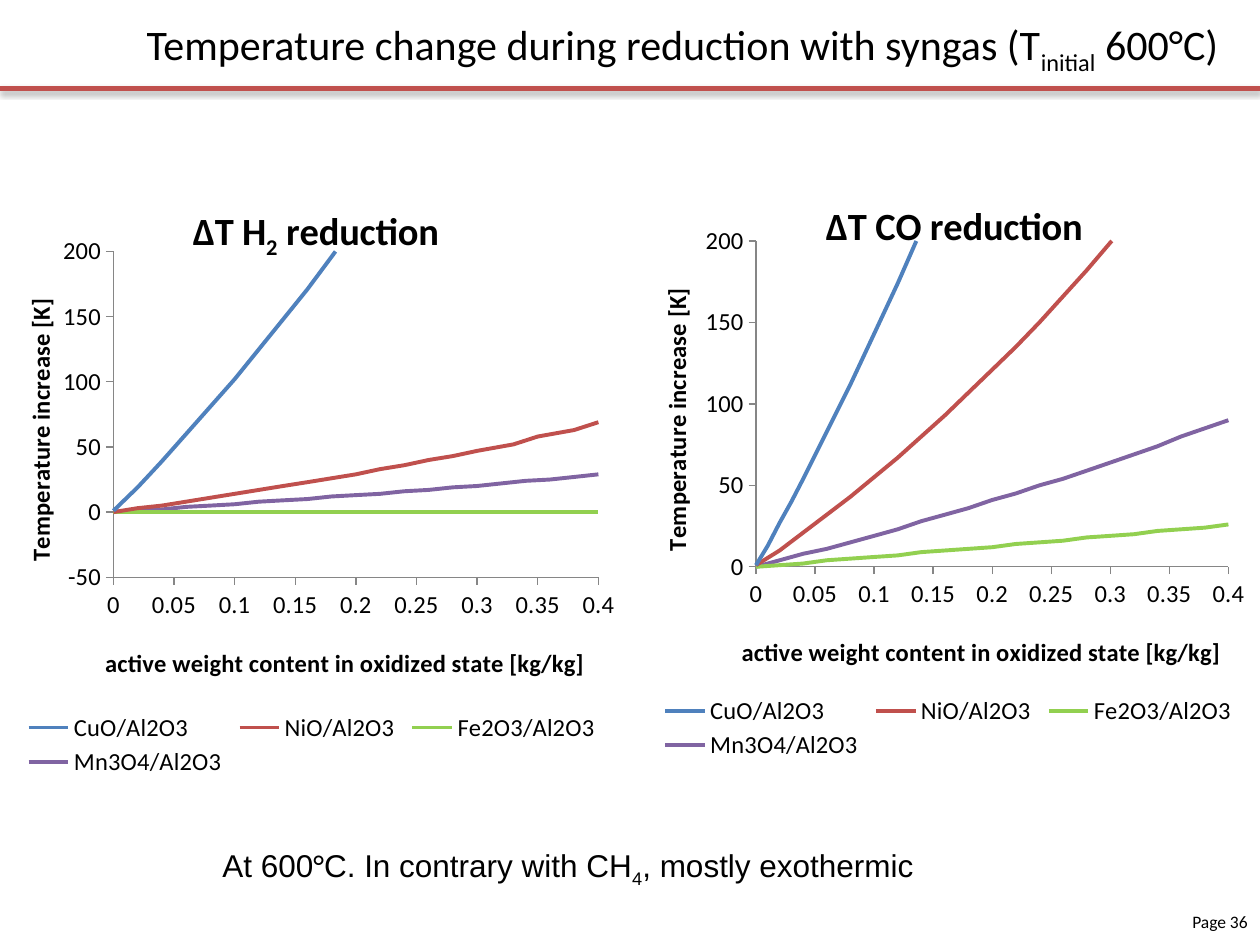
import pptx
import pptx.chart.data
import pptx.dml.color
import pptx.enum.chart
import pptx.enum.shapes
import pptx.enum.text
import pptx.oxml
import pptx.oxml.ns
import pptx.util
from dataclasses import dataclass

Pt = pptx.util.Pt
qn = pptx.oxml.ns.qn


@dataclass(frozen=True)
class Theme:
    text: str = "000000"
    rule: str = "C0504D"
    axis: str = "868686"
    series: tuple = ("4F81BD", "C0504D", "92D050", "8064A2")
    heading_font: str = "Calibri"
    body_font: str = "Arial"
    title: int = 24
    chart_title: int = 22
    note: int = 18
    chart_text: int = 14
    page: int = 10


THEME = Theme()

# Weight contents: one grid for CuO, one for NiO, one for both Fe and Mn oxides
X_CU = [0, .01, .02, .03, .04, .06, .08, .1, .12, .14, .16, .18, .2,
        .21, .22, .23, .24, .26, .28, .3]
X_NI = [i / 50 for i in range(16)] + [.33, .35, .38, .4]
X_LOW = [0] + [i / 50 for i in range(2, 21)]
OXIDES = [("CuO/Al2O3", X_CU), ("NiO/Al2O3", X_NI),
          ("Fe2O3/Al2O3", X_LOW), ("Mn3O4/Al2O3", X_LOW)]

H2_RISE = [
    [1, 10, 19, 29, 39, 60, 81, 102, 125, 148, 171, 196, 221, 234, 247, 260, 273, 301, 329, 359],
    [0, 3, 5, 8, 11, 14, 17, 20, 23, 26, 29, 33, 36, 40, 43, 47, 52, 58, 63, 69],
    [0] * 20,
    [0, 2, 4, 5, 6, 8, 9, 10, 12, 13, 14, 16, 17, 19, 20, 22, 24, 25, 27, 29],
]
CO_RISE = [
    [1, 13, 27, 40, 54, 83, 112, 143, 174, 207, 241, 276, 312, 331, 350, 369, 389, 430, 472, 516],
    [1, 10, 21, 32, 43, 55, 67, 80, 93, 107, 121, 135, 150, 166, 182, 199, 222, 245, 270, 296],
    [0, 2, 4, 5, 6, 7, 9, 10, 11, 12, 14, 15, 16, 18, 19, 20, 22, 23, 24, 26],
    [0, 8, 11, 15, 19, 23, 28, 32, 36, 41, 45, 50, 54, 59, 64, 69, 74, 80, 85, 90],
]

# Places of chart parts, as fractions of the chart: x, y and perhaps w, h
H2_PLACES = {"title": (.3, .04), "plot": (.18, .12, .77, .535), "x": (.16, .76),
             "y": (.03, .19), "legend": (.03, .87, .93, .12)}
CO_PLACES = {"title": (.3, .04), "plot": (.2, .12, .75, .535), "x": (.17, .76),
             "y": (.04, .19), "legend": (.04, .86, .93, .12)}


def rgb(value):
    return pptx.dml.color.RGBColor.from_string(value)


def style_font(font, size, name=THEME.heading_font, bold=False):
    font.size, font.name, font.bold = Pt(size), name, bold
    font.color.rgb = rgb(THEME.text)


def write_runs(p, parts, size, name=THEME.heading_font, bold=False):
    """Each part is a text, a (text, baseline) or a (text, baseline, font)."""
    for part in parts:
        text, base, face = (((part,) if isinstance(part, str) else part) + (0, name))[:3] \
            if isinstance(part, str) or len(part) == 1 else (part + (name,))[:3]
        r = p.add_run()
        r.text = text
        style_font(r.font, size, face, bold)
        if base:
            r.font._element.set("baseline", str(base * 1000))


def place_part(element, place):
    """Give a chart part a manual layout."""
    for old in element.findall(qn("c:layout")):
        element.remove(old)
    inner = '<c:layoutTarget val="inner"/>' if element.tag == qn("c:plotArea") else ""
    modes = "".join(f'<c:{k}Mode val="edge"/>' for k in "xy")
    sizes = "".join(f'<c:{k} val="{v}"/>' for k, v in zip("xywh", place))
    layout = pptx.oxml.parse_xml(
        f'<c:layout {pptx.oxml.ns.nsdecls("c")}><c:manualLayout>'
        f'{inner}{modes}{sizes}</c:manualLayout></c:layout>')
    for tag in ("c:tx", "c:legendPos"):
        before = element.find(qn(tag))
        if before is not None:
            before.addnext(layout)
            return
    element.insert(0, layout)


def style_axis(axis, title, place, low, high, step):
    axis.minimum_scale, axis.maximum_scale, axis.major_unit = low, high, step
    axis.has_major_gridlines = False
    axis.major_tick_mark = pptx.enum.chart.XL_TICK_MARK.OUTSIDE
    axis.minor_tick_mark = pptx.enum.chart.XL_TICK_MARK.NONE
    axis.tick_label_position = pptx.enum.chart.XL_TICK_LABEL_POSITION.LOW
    axis.tick_labels.number_format = "General"
    axis.tick_labels.number_format_is_linked = False
    style_font(axis.tick_labels.font, THEME.chart_text)
    axis.format.line.color.rgb = rgb(THEME.axis)
    axis.format.line.width = Pt(.75)
    axis.crosses = pptx.enum.chart.XL_AXIS_CROSSES.MINIMUM
    write_runs(axis.axis_title.text_frame.paragraphs[0], [title], THEME.chart_text, bold=True)
    place_part(axis.axis_title._element, place)


def add_rise_chart(s, box, title, rises, low, places):
    data = pptx.chart.data.XyChartData()
    for (name, xs), rise in zip(OXIDES, rises):
        series = data.add_series(name)
        for x, y in zip(xs, rise):
            series.add_data_point(x, y)
    chart = s.shapes.add_chart(
        pptx.enum.chart.XL_CHART_TYPE.XY_SCATTER_LINES_NO_MARKERS, *box, data).chart
    style_font(chart.font, THEME.chart_text)

    # Lines
    plot = chart.plots[0]
    plot.vary_by_categories = False
    for series, color in zip(plot.series, THEME.series):
        series.smooth = False
        series.marker.style = pptx.enum.chart.XL_MARKER_STYLE.NONE
        series.format.line.color.rgb = rgb(color)
        series.format.line.width = Pt(2.25)
    place_part(chart._chartSpace.chart.plotArea, places["plot"])

    # Axes
    style_axis(chart.category_axis, "active weight content in oxidized state [kg/kg]",
               places["x"], 0, .4, .05)
    style_axis(chart.value_axis, "Temperature increase [K]", places["y"], low, 200, 50)
    body = chart.value_axis.axis_title.text_frame._txBody.bodyPr
    body.set("rot", "-5400000")
    body.set("vert", "horz")

    # Title and legend
    write_runs(chart.chart_title.text_frame.paragraphs[0], title, THEME.chart_title, bold=True)
    place_part(chart.chart_title._element, places["title"])
    chart.has_legend = True
    chart.legend.position = pptx.enum.chart.XL_LEGEND_POSITION.RIGHT
    chart.legend.include_in_layout = False
    style_font(chart.legend.font, THEME.chart_text)
    place_part(chart.legend._element, places["legend"])


def add_header(s, box, rule_y, width):
    # Red rule with a soft shadow
    rule = s.shapes.add_connector(pptx.enum.shapes.MSO_CONNECTOR.STRAIGHT,
                                  0, rule_y, width, rule_y)
    rule.line.color.rgb = rgb(THEME.rule)
    rule.line.width = Pt(3)
    rule._element.spPr.append(pptx.oxml.parse_xml(
        f'<a:effectLst {pptx.oxml.ns.nsdecls("a")}>'
        f'<a:outerShdw blurRad="{Pt(3.1)}" dist="{Pt(1.8)}" dir="5400000" rotWithShape="0">'
        '<a:srgbClr val="000000"><a:alpha val="35000"/></a:srgbClr>'
        '</a:outerShdw></a:effectLst>'))
    # Title
    sp = s.shapes.title
    sp.left, sp.top, sp.width, sp.height = box
    tf = sp.text_frame
    tf.auto_size = pptx.enum.text.MSO_AUTO_SIZE.NONE
    tf.vertical_anchor = pptx.enum.text.MSO_ANCHOR.TOP
    p = tf.paragraphs[0]
    p.alignment = pptx.enum.text.PP_ALIGN.CENTER
    write_runs(p, ["Temperature change during reduction with syngas (T",
                   ("initial", -25), " 600°C)"], THEME.title)


def add_text(s, box, parts, size, name=THEME.heading_font, align="LEFT", wrap=True):
    tf = s.shapes.add_textbox(*box).text_frame
    tf.word_wrap = wrap
    p = tf.paragraphs[0]
    p.alignment = pptx.enum.text.PP_ALIGN[align]
    write_runs(p, parts, size, name)


def main():
    prs = pptx.Presentation()
    prs.slide_width, prs.slide_height = Pt(720), Pt(540)
    s = prs.slides.add_slide(prs.slide_layouts[5])
    add_header(s, (Pt(72), Pt(7.2), Pt(636), Pt(70.5)), Pt(50.4), prs.slide_width)

    # Charts side by side
    half, height = Pt(360), Pt(348)
    add_rise_chart(s, (half, Pt(96), half, height), ["ΔT CO reduction"],
                   CO_RISE, 0, CO_PLACES)
    add_rise_chart(s, (0, Pt(102), half, height), ["ΔT H", ("2", -25), " reduction"],
                   H2_RISE, -50, H2_PLACES)

    # Remark and page number
    add_text(s, (Pt(120), Pt(480), Pt(418), Pt(29)),
             ["At 600", ("°", 0, THEME.heading_font), "C. In contrary with CH",
              ("4", -25), ", mostly exothermic"], THEME.note, THEME.body_font, wrap=False)
    add_text(s, (Pt(666), Pt(517), Pt(54), Pt(23)), ["Page 36"], THEME.page, align="RIGHT")
    prs.save("out.pptx")


if __name__ == "__main__":
    main()
